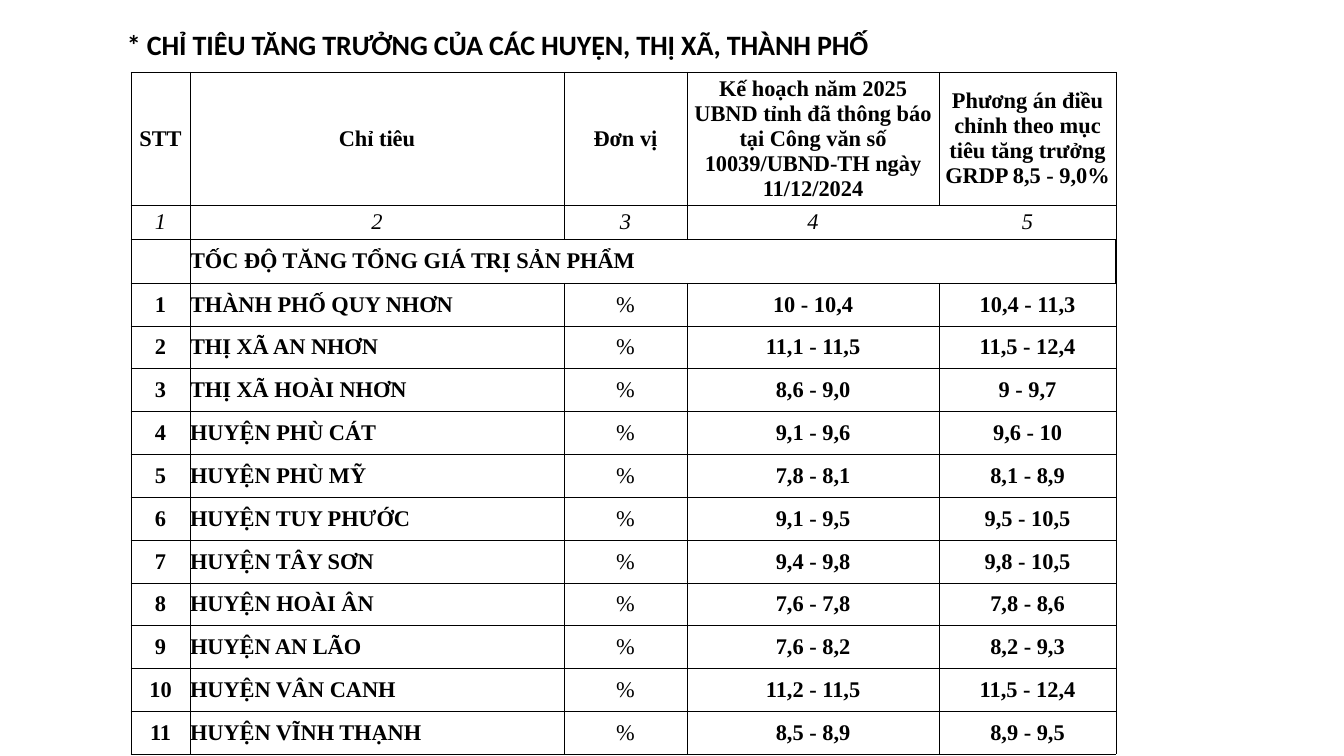
from dataclasses import dataclass

from lxml import etree
from pptx import Presentation
from pptx.dml.color import RGBColor
from pptx.enum.text import MSO_ANCHOR, MSO_AUTO_SIZE, PP_ALIGN
from pptx.oxml.ns import qn
from pptx.util import Pt

LEFT, CENTER, JUSTIFY = PP_ALIGN.LEFT, PP_ALIGN.CENTER, PP_ALIGN.JUSTIFY
TOP, MIDDLE = MSO_ANCHOR.TOP, MSO_ANCHOR.MIDDLE
NO_AUTOFIT = MSO_AUTO_SIZE.NONE


@dataclass(frozen=True)
class Theme:
    ink: str = "000000"
    title_font: str = "Calibri"
    table_font: str = "Times New Roman"
    title_size: float = 20
    table_size: float = 16
    border: float = 0.5
    heavy_border: float = 1


class SlideBuilder:
    def __init__(self, page, theme):
        self.page = page
        self.theme = theme

    def add_span(self, para, text, font_name, size, bold=True, italic=False):
        span = para.add_run()
        span.text = text
        font = span.font
        font.name = font_name
        font.size = Pt(size)
        font.bold = bold
        font.italic = italic
        font.color.rgb = RGBColor.from_string(self.theme.ink)
        return span

    def title(self, text, left, top, width, height):
        box = self.page.shapes.title
        box.left, box.top, box.width, box.height = map(Pt, (left, top, width, height))
        frame = box.text_frame
        frame.word_wrap = True
        frame.auto_size = NO_AUTOFIT
        frame.vertical_anchor = TOP
        para = frame.paragraphs[0]
        para.alignment = JUSTIFY
        para.line_spacing = 1.2
        para.space_before = Pt(0)
        span = self.add_span(para, text, self.theme.title_font, self.theme.title_size)
        span.font._element.set("spc", "-10")

    def border(self, cell, side, width):
        line = etree.SubElement(cell._tc.get_or_add_tcPr(), qn(f"a:ln{side}"))
        line.set("w", str(int(Pt(width))))
        if width:
            fill = etree.SubElement(line, qn("a:solidFill"))
            etree.SubElement(fill, qn("a:srgbClr")).set("val", self.theme.ink)
        else:
            etree.SubElement(line, qn("a:noFill"))

    def cell(self, cell, text, align, bold, italic, borders):
        cell.margin_left = cell.margin_right = cell.margin_top = cell.margin_bottom = 0
        cell.vertical_anchor = MIDDLE
        for side in "LRTB":
            self.border(cell, side, borders.get(side, self.theme.border))
        cell.fill.background()
        para = cell.text_frame.paragraphs[0]
        para.alignment = align
        if text:
            self.add_span(para, text, self.theme.table_font, self.theme.table_size, bold, italic)
        else:
            para.font.size = Pt(self.theme.table_size)

    def table(self, rows, left, top, widths, heights, special_borders):
        frame = self.page.shapes.add_table(
            len(rows), len(widths), Pt(left), Pt(top), Pt(sum(widths)), Pt(sum(heights)))
        table = frame.table
        table.first_row = table.horz_banding = False
        for column, width in zip(table.columns, widths):
            column.width = Pt(width)
        for row, height in zip(table.rows, heights):
            row.height = Pt(height)
        for i, row in enumerate(rows):
            for j, text in enumerate(row):
                align = LEFT if j == 1 and i > 1 else CENTER
                bold = i != 1 and text != "%"
                self.cell(table.cell(i, j), text, align, bold, i == 1,
                          special_borders.get((i, j), {}))
        return table


HEADER = [
    "STT", "Chỉ tiêu", "Đơn vị",
    "Kế hoạch năm 2025 UBND tỉnh đã thông báo tại Công văn số 10039/UBND-TH ngày 11/12/2024",
    "Phương án điều chỉnh theo mục tiêu tăng trưởng GRDP 8,5 - 9,0%",
]
SECTION = ["", "TỐC ĐỘ TĂNG TỔNG GIÁ TRỊ SẢN PHẨM", "", "", ""]
DISTRICTS = [
    ("THÀNH PHỐ QUY NHƠN", "10 - 10,4", "10,4 - 11,3"),
    ("THỊ XÃ AN NHƠN", "11,1 - 11,5", "11,5 - 12,4"),
    ("THỊ XÃ HOÀI NHƠN", "8,6 - 9,0", "9 - 9,7"),
    ("HUYỆN PHÙ CÁT", "9,1 - 9,6", "9,6 - 10"),
    ("HUYỆN PHÙ MỸ", "7,8 - 8,1", "8,1 - 8,9"),
    ("HUYỆN TUY PHƯỚC", "9,1 - 9,5", "9,5 - 10,5"),
    ("HUYỆN TÂY SƠN", "9,4 - 9,8", "9,8 - 10,5"),
    ("HUYỆN HOÀI ÂN", "7,6 - 7,8", "7,8 - 8,6"),
    ("HUYỆN AN LÃO", "7,6 - 8,2", "8,2 - 9,3"),
    ("HUYỆN VÂN CANH", "11,2 - 11,5", "11,5 - 12,4"),
    ("HUYỆN VĨNH THẠNH", "8,5 - 8,9", "8,9 - 9,5"),
]


def main():
    deck = Presentation()
    deck.slide_width, deck.slide_height = Pt(960), Pt(540)
    theme = Theme()
    builder = SlideBuilder(deck.slides.add_slide(deck.slide_layouts[5]), theme)

    builder.title("* CHỈ TIÊU TĂNG TRƯỞNG CỦA CÁC HUYỆN, THỊ XÃ, THÀNH PHỐ",
                  83.5, 11.5, 713.5, 29.5)

    numbers = [str(number) for number in range(1, len(HEADER) + 1)]
    district_rows = [[str(rank), name, "%", plan, revised]
                     for rank, (name, plan, revised) in enumerate(DISTRICTS, 1)]
    heavy_right = {"R": theme.heavy_border}
    table = builder.table(
        [HEADER, numbers, SECTION] + district_rows,
        left=93.6, top=51.5,
        widths=[42.2, 267, 88, 180, 126.4],
        heights=[95.2, 24.2, 31.4] + [30.6] * len(DISTRICTS),
        special_borders={(1, 3): {"R": 0}, (1, 4): {"L": 0},
                         (2, 1): heavy_right, (2, 4): heavy_right})
    table.cell(2, 1).merge(table.cell(2, 4))

    deck.save("out.pptx")


if __name__ == "__main__":
    main()
